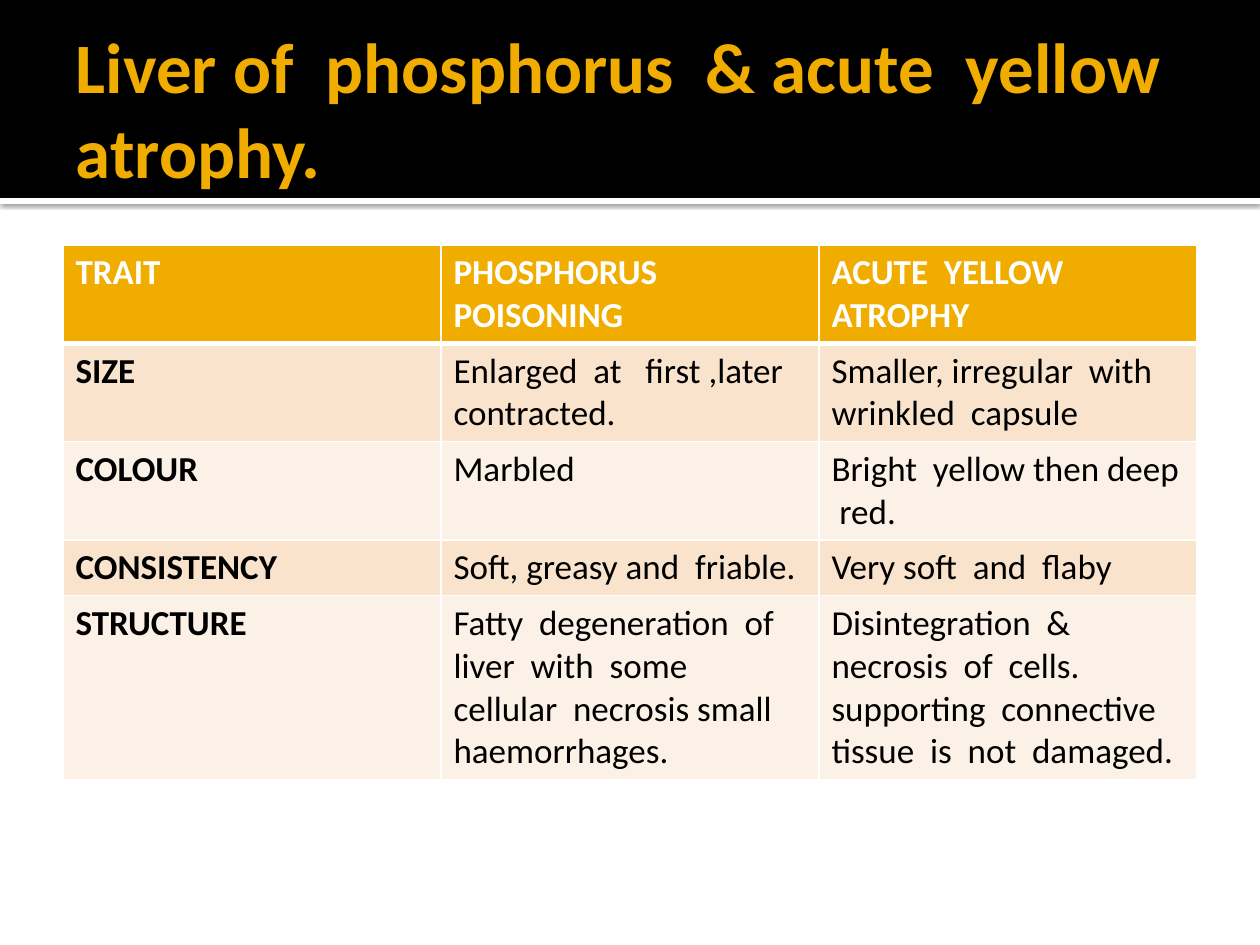
from lxml.etree import SubElement as Sub
from pptx import Presentation
from pptx.dml.color import RGBColor as RGB
from pptx.enum.shapes import MSO_SHAPE as Kind
from pptx.enum.text import MSO_ANCHOR as Anchor, MSO_AUTO_SIZE as Auto, PP_ALIGN as Align
from pptx.oxml import parse_xml
from pptx.oxml.ns import nsdecls, qn
from pptx.util import Pt

PX = 914400 // 126


def paint(fill, hue):
    fill.solid()
    fill.fore_color.rgb = RGB.from_string(hue)


def write(para, text, size, hue, bold):
    run = para.add_run()
    run.text = text
    font = run.font
    font.name, font.size, font.bold = "Calibri", Pt(size), bold
    font.color.rgb = RGB.from_string(hue)


deck = Presentation()
deck.slide_width, deck.slide_height = 1260 * PX, 945 * PX
slide = deck.slides.add_slide(deck.slide_layouts[5])
shapes = slide.shapes
tree = shapes._spTree

bars = []
for top, high, hue in [(198, 6, "FFFFFF"), (0, 198, "000000")]:
    bar = shapes.add_shape(Kind.RECTANGLE, 0, top * PX, 1260 * PX, high * PX)
    bar.shadow.inherit = False
    paint(bar.fill, hue)
    bar.line.fill.background()
    tree.insert(2 + len(bars), bar._element)
    bars.append(bar)

glow = bars[0]._element.spPr.find(qn("a:effectLst"))
glow.append(parse_xml(
    f'<a:outerShdw {nsdecls("a")} blurRad="31750" dist="10160" dir="5400000" rotWithShape="0">'
    '<a:srgbClr val="000000"><a:alpha val="60000"/></a:srgbClr></a:outerShdw>'))

title = shapes.title
title.left, title.top, title.width, title.height = 63 * PX, 21 * PX, 1134 * PX, 173 * PX
frame = title.text_frame
frame.word_wrap, frame.auto_size = True, Auto.NONE
frame.vertical_anchor = Anchor.MIDDLE
frame.margin_left = 13 * PX
frame.margin_right = frame.margin_top = frame.margin_bottom = 6 * PX
frame.paragraphs[0].alignment = Align.LEFT
write(frame.paragraphs[0], "Liver of  phosphorus  & acute  yellow  atrophy.", 40.5, "F0AD00", True)

rows = [
    ("TRAIT", "PHOSPHORUS  POISONING", "ACUTE  YELLOW  ATROPHY"),
    ("SIZE", "Enlarged  at   first ,later  contracted.", "Smaller, irregular  with  wrinkled  capsule"),
    ("COLOUR", "Marbled", "Bright  yellow then deep  red."),
    ("CONSISTENCY", "Soft, greasy and  friable.", "Very soft  and  flaby"),
    ("STRUCTURE", "Fatty  degeneration  of  liver  with  some  cellular  necrosis small  haemorrhages.",
     "Disintegration  &  necrosis  of  cells. supporting  connective  tissue  is  not  damaged."),
]
grid = shapes.add_table(5, 3, 63 * PX, 245 * PX, 1134 * PX, 260 * PX)
table = grid.table
for r, row in enumerate(rows):
    table.rows[r].height = 52 * PX
    head = r == 0
    back = "F0AD00" if head else ("FCF1E7", "F9E3CC")[r % 2]
    for c, text in enumerate(row):
        cell = table.cell(r, c)
        write(cell.text_frame.paragraphs[0], text, 20, "FFFFFF" if head else "000000", head or c == 0)
        props = cell._tc.get_or_add_tcPr()
        for side in "LRTB":
            thick = head and side == "B" or r == 1 and side == "T"
            edge = Sub(props, qn(f"a:ln{side}"), w=str(Pt(3 if thick else 1)))
            Sub(Sub(edge, qn("a:solidFill")), qn("a:srgbClr"), val="FFFFFF")
        paint(cell.fill, back)
grid.height = 525 * PX

deck.save("out.pptx")
